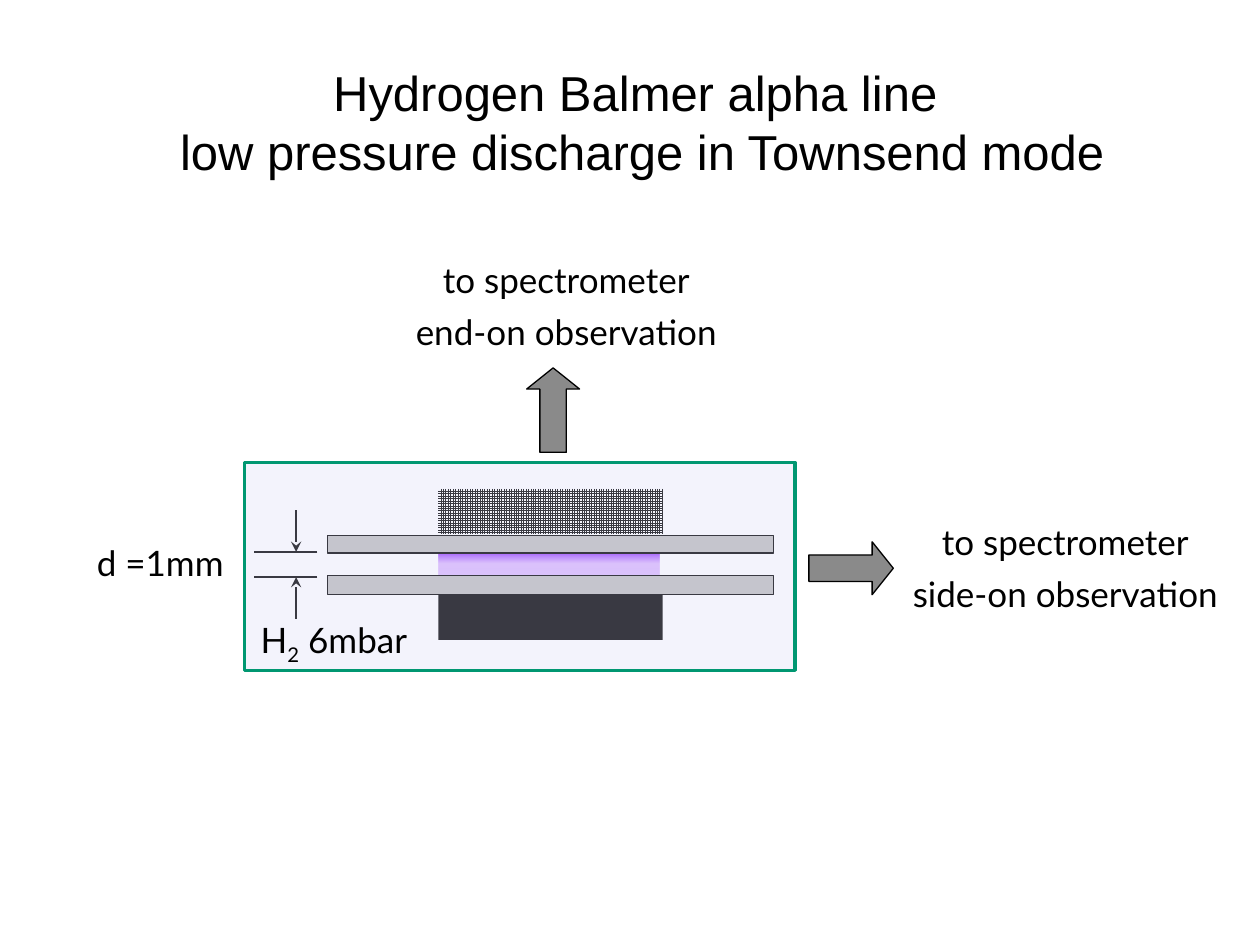
from lxml import etree
from pptx import Presentation
from pptx.dml.color import RGBColor
from pptx.enum.dml import MSO_PATTERN
from pptx.enum.shapes import MSO_CONNECTOR, MSO_SHAPE
from pptx.enum.text import MSO_AUTO_SIZE, PP_ALIGN
from pptx.oxml.ns import qn
from pptx.util import Inches, Pt

RECT = MSO_SHAPE.RECTANGLE
UP, RIGHT = MSO_SHAPE.UP_ARROW, MSO_SHAPE.RIGHT_ARROW
GRID = MSO_PATTERN.SMALL_GRID
STRAIGHT = MSO_CONNECTOR.STRAIGHT
LEFT, CENTER = PP_ALIGN.LEFT, PP_ALIGN.CENTER
GROW = MSO_AUTO_SIZE.SHAPE_TO_FIT_TEXT
BLACK, GREY = "000000", "BFBFBF"


def color(code):
    return RGBColor.from_string(code)


def fade(node, percent):
    etree.SubElement(node, qn("a:alpha"), val=str(percent * 1000))


class Sketch:
    font, size, ink, thin = "Lato", 20, BLACK, 0.75

    def __init__(self, slide):
        self.slide = slide

    def text(self, box, lines, align=CENTER, font=None, size=None, gap=0, wrap=True):
        """Each line is a list of (text, baseline percent) runs."""
        frame = self.slide.shapes.add_textbox(*map(Inches, box)).text_frame
        frame.word_wrap = wrap
        frame.auto_size = GROW
        for i, line in enumerate(lines):
            para = frame.add_paragraph() if i else frame.paragraphs[0]
            para.alignment = align
            if i and gap:
                para.space_before = Pt(gap)
            for words, shift in line:
                run = para.add_run()
                run.text = words
                run.font.name = font or self.font
                run.font.size = Pt(size or self.size)
                run.font.color.rgb = color(self.ink)
                if shift:
                    run.font._element.set("baseline", str(shift * 1000))

    def shape(self, kind, box, fill=None, alpha=None, line=None, width=thin):
        item = self.slide.shapes.add_shape(kind, *map(Inches, box))
        item.shadow.inherit = False
        if fill:
            item.fill.solid()
            item.fill.fore_color.rgb = color(fill)
        if alpha:
            fade(item.fill._xPr.find(".//" + qn("a:srgbClr")), alpha)
        if line:
            item.line.color.rgb = color(line)
            item.line.width = Pt(width)
        else:
            item.line.fill.background()
        return item

    def arrow(self, kind, box):
        item = self.shape(kind, box, BLACK, 46, BLACK)
        item.adjustments[0], item.adjustments[1] = 0.5, 0.4

    def mesh(self, box):
        fill = self.shape(RECT, box).fill
        fill.patterned()
        fill.pattern = GRID
        fill.fore_color.rgb = color(BLACK)
        fill.back_color.rgb = color("FFFFFF")

    def glow(self, box, stops):
        item = self.shape(RECT, box)
        item.fill.gradient()
        item.fill.gradient_angle = 270
        group = item.fill._xPr.find(".//" + qn("a:gsLst"))
        for old in list(group):
            group.remove(old)
        for pos, code, alpha in stops:
            stop = etree.SubElement(group, qn("a:gs"), pos=str(pos * 1000))
            fade(etree.SubElement(stop, qn("a:srgbClr"), val=code), alpha)

    def line(self, start, end, tip=False):
        item = self.slide.shapes.add_connector(STRAIGHT, *map(Inches, start + end))
        item.line.color.rgb = color(self.ink)
        item.line.width = Pt(self.thin)
        if tip:
            etree.SubElement(item.line._get_or_add_ln(), qn("a:tailEnd"), type="stealth")
        etree.SubElement(item._element.spPr, qn("a:effectLst"))


def main():
    deck = Presentation()
    deck.slide_width, deck.slide_height = Inches(10), Inches(7.5)
    art = Sketch(deck.slides.add_slide(deck.slide_layouts[6]))

    # Title
    art.text((1.28, 0.45, 7.63, 1.05),
             [[("Hydrogen Balmer alpha line ", 0)],
              [("low pressure discharge in Townsend mode", 0)]],
             font="Arial", size=28, wrap=False)

    # Views: arrow and label for each
    views = [(UP, (4.18, 2.92, 0.42, 0.67), (3.08, 2, 2.83, 0.86), "end-on"),
             (RIGHT, (6.42, 4.3, 0.67, 0.42), (7.08, 4.08, 2.75, 0.86), "side-on")]
    for kind, spot, box, view in views:
        art.arrow(kind, spot)
        art.text(box, [[("to spectrometer", 0)], [(view + " observation", 0)]], gap=6)

    # Discharge, electrodes and plates
    art.glow((3.48, 4.38, 1.75, 0.25),
             [(1, "8C2AFF", 100), (38, "CC99FF", 66), (100, "DFC3FF", 100)])
    art.shape(RECT, (3.48, 4.72, 1.78, 0.36), BLACK)
    art.shape(RECT, (2.6, 4.57, 3.54, 0.15), GREY, line=BLACK)
    art.mesh((3.48, 3.88, 1.78, 0.36))
    art.shape(RECT, (2.6, 4.25, 3.54, 0.14), GREY, line=BLACK)

    # Gap dimension
    for edge, far in ((4.38, 4.05), (4.58, 4.91)):
        art.line((2.52, edge), (2.02, edge))
        art.line((2.35, far), (2.35, edge), tip=True)
    art.text((0.67, 4.25, 1.44, 0.43), [[("d =1mm", 0)]], LEFT)

    # Tinted chamber over the parts, with its gas
    art.shape(RECT, (1.94, 3.67, 4.37, 1.65), "D6D6F5", 27, "009771", 2)
    art.text((1.97, 4.86, 1.44, 0.43), [[("H", 0), ("2", -25), (" 6mbar", 0)]], LEFT)

    deck.save("out.pptx")


if __name__ == "__main__":
    main()
